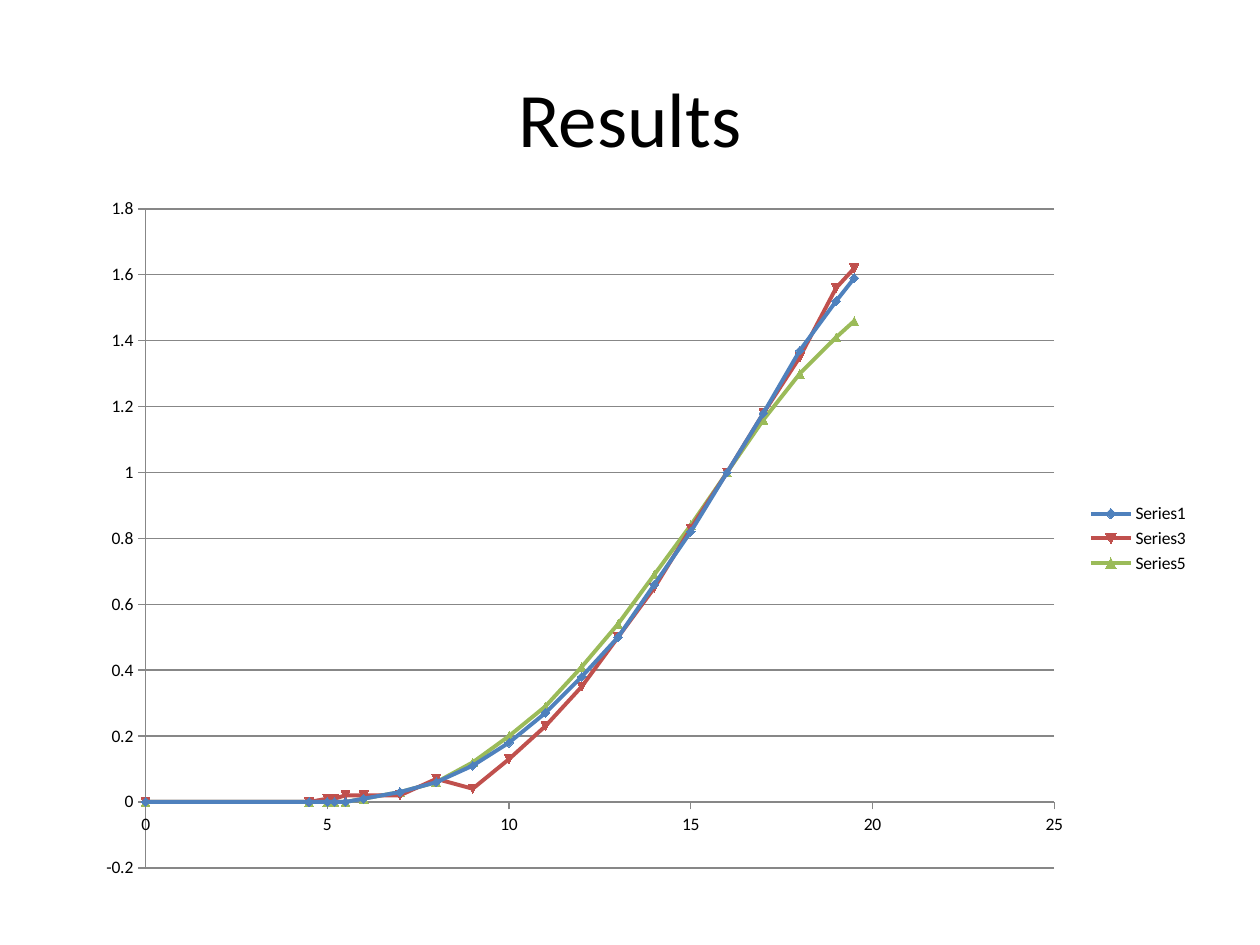
from pptx import Presentation
from pptx.chart.data import XyChartData
from pptx.dml.color import RGBColor as Rgb
from pptx.enum.chart import XL_CHART_TYPE as Kind
from pptx.enum.chart import XL_LEGEND_POSITION as Side
from pptx.enum.chart import XL_TICK_MARK as Tick
from pptx.enum.text import MSO_ANCHOR as Anchor
from pptx.enum.text import PP_ALIGN as Align
from pptx.util import Pt

PX = 914400 // 126
COLORS = {"text": "000000", "axis": "878787",
          "blue": "4F81BD", "red": "C0504D", "green": "9BBB59"}

# Chart data: every curve shares the same x values
X = [0, 4.5, 5, 5.2, 5.5, *range(6, 20), 19.5]
CURVES = [
    ("Series1", "blue", [0, 0, 0, 0, 0, 0.01, 0.03, 0.06, 0.11, 0.18, 0.27,
                         0.38, 0.5, 0.66, 0.82, 1, 1.18, 1.37, 1.52, 1.59]),
    ("Series3", "red", [0, 0, 0.01, 0.01, 0.02, 0.02, 0.02, 0.07, 0.04, 0.13,
                        0.23, 0.35, 0.5, 0.65, 0.83, 1, 1.18, 1.35, 1.56, 1.62]),
    ("Series5", "green", [0, 0, 0, 0, 0, 0.01, 0.03, 0.06, 0.12, 0.2, 0.29,
                          0.41, 0.54, 0.69, 0.84, 1, 1.16, 1.3, 1.41, 1.46]),
]


class Deck:
    face = "Calibri"

    def __init__(self, wide, high):
        self.prs = Presentation()
        self.prs.slide_width, self.prs.slide_height = wide * PX, high * PX
        self.slide = self.prs.slides.add_slide(self.prs.slide_layouts[5])

    def font(self, font, size):
        font.name, font.size = self.face, Pt(size)
        font.color.rgb = Rgb.from_string(COLORS["text"])

    def line(self, line, color, width):
        line.color.rgb = Rgb.from_string(COLORS[color])
        line.width = Pt(width)

    def title(self, text, x, y, w, h, size):
        box = self.slide.shapes.title
        box.left, box.top, box.width, box.height = (n * PX for n in (x, y, w, h))
        frame = box.text_frame
        frame.text = text
        frame.vertical_anchor = Anchor.MIDDLE
        par = frame.paragraphs[0]
        par.alignment = Align.CENTER
        self.font(par.font, size)

    def axis(self, axis, low, high, step, grid):
        axis.minimum_scale, axis.maximum_scale = low, high
        axis.major_unit = step
        axis.major_tick_mark, axis.minor_tick_mark = Tick.OUTSIDE, Tick.NONE
        axis.has_major_gridlines = grid
        self.line(axis.format.line, "axis", 0.75)
        if grid:
            self.line(axis.major_gridlines.format.line, "axis", 0.75)

    def scatter(self, xs, curves, x, y, w, h, size):
        data = XyChartData()
        for name, _, ys in curves:
            series = data.add_series(name)
            for point in zip(xs, ys):
                series.add_data_point(*point)
        chart = self.slide.shapes.add_chart(
            Kind.XY_SCATTER_SMOOTH, *(n * PX for n in (x, y, w, h)), data).chart
        self.font(chart.font, size)
        chart.has_title = False
        chart.has_legend = True
        chart.legend.position = Side.RIGHT
        chart.legend.include_in_layout = False
        chart.plots[0].vary_by_categories = False
        for series, (_, color, _) in zip(chart.plots[0].series, curves):
            self.line(series.format.line, color, 2.25)
            series.smooth = True
        self.axis(chart.category_axis, 0, 25, 5, False)
        self.axis(chart.value_axis, -0.2, 1.8, 0.2, True)


def main():
    deck = Deck(1260, 945)
    # Heading
    deck.title("Results", 63, 38, 1134, 157, 44)
    # Curves
    deck.scatter(X, CURVES, 84, 185, 1118, 707, 10)
    deck.prs.save("out.pptx")


if __name__ == "__main__":
    main()
